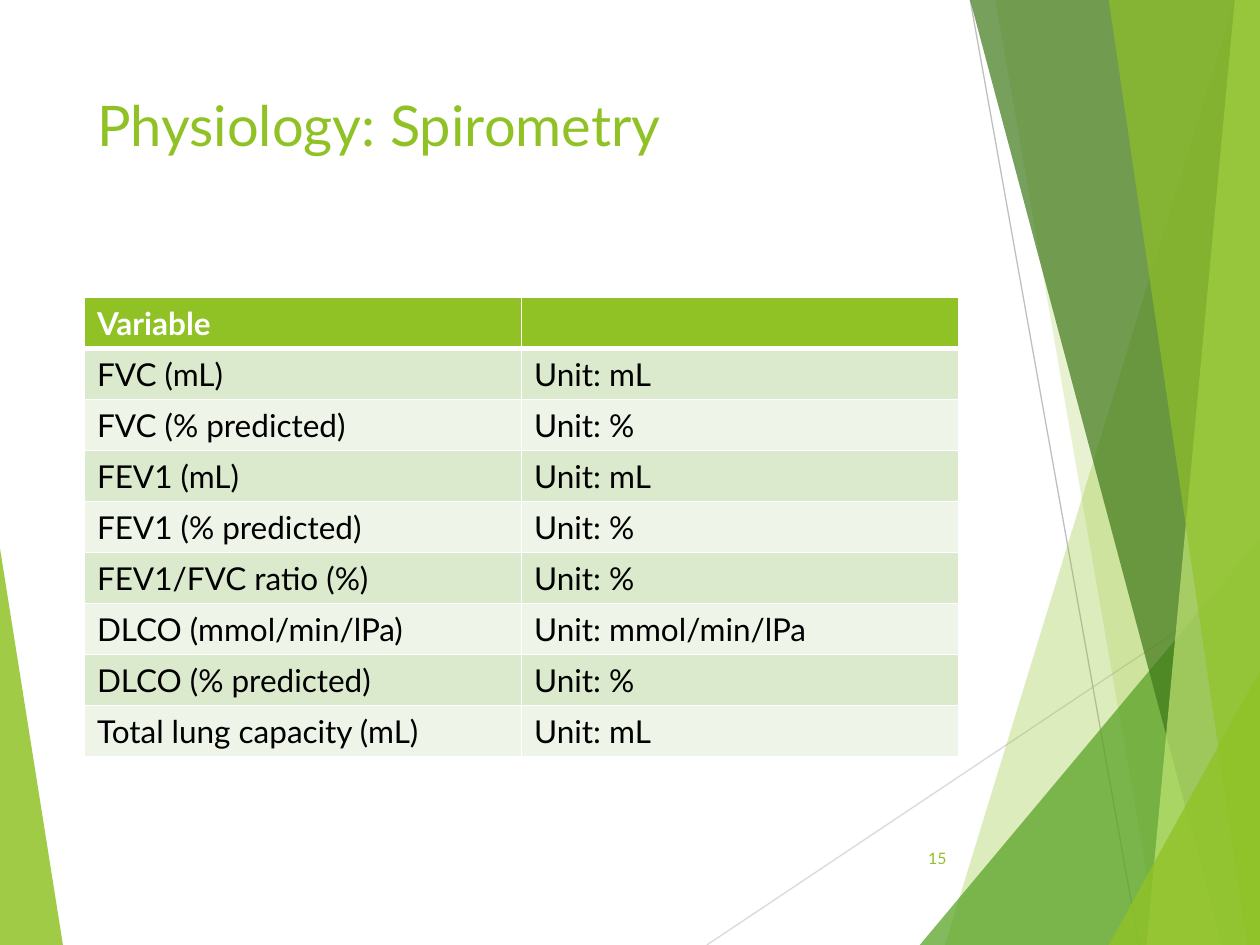
from pptx import Presentation
from pptx.dml.color import RGBColor
from pptx.enum.shapes import MSO_CONNECTOR
from pptx.enum.text import MSO_ANCHOR, PP_ALIGN
from pptx.oxml import parse_xml
from pptx.oxml.ns import nsdecls, qn
from pptx.util import Inches, Pt
from lxml import etree

STRAIGHT = MSO_CONNECTOR.STRAIGHT
TOP, MIDDLE = MSO_ANCHOR.TOP, MSO_ANCHOR.MIDDLE
LEFT, RIGHT = PP_ALIGN.LEFT, PP_ALIGN.RIGHT

FONT = "Lato"
TITLE_ONLY = 5
WIDTH, HEIGHT = Inches(10), Inches(7.5)
COLORS = {
    "lime": "90C226", "green": "54A021", "forest": "3F7819", "pale": "C0E474",
    "light_gray": "D9D9D9", "gray": "BFBFBF", "white": "FFFFFF", "black": "000000",
    "odd_row": "DBE9CD", "even_row": "EEF4E8",
}

# Boxes and points are percentages of the slide's width and height
FULL_BOX = (0, 0, 100, 100)
TITLE_BOX = (6.7, 8.93, 69.4, 19.2)
TABLE_BOX = (6.7, 31.5, 69.4, 48.6)
NUMBER_BOX = (70.5, 88.13, 5.6, 5.33)

# Facets: colour, opacity in percent, corners
LEFT_FACET = ("lime", 85, [(0, 58.5), (4.9, 100), (0, 100)])
RIGHT_FACETS = [
    ("lime", 30, [(97.5, 0), (75.4, 100), (100, 100), (100, 0)]),
    ("lime", 20, [(78.8, 0), (91.9, 100), (100, 100), (100, 0)]),
    ("green", 72, [(72.6, 100), (100, 57.2), (100, 100)]),
    ("forest", 70, [(76.7, 0), (97, 100), (100, 100), (100, 0)]),
    ("pale", 70, [(98.1, 0), (90.7, 100), (100, 100), (100, 0)]),
    ("lime", 65, [(88.3, 0), (98.6, 100), (100, 100), (99.8, 0)]),
    ("lime", 80, [(88.1, 100), (100, 71.3), (100, 100)]),
]
RAYS = [
    ("light_gray", (56.1, 100), (100, 60.9)),
    ("gray", (77, 0), (90.4, 100)),
]

ROWS = [
    ("Variable", ""),
    ("FVC (mL)", "Unit: mL"),
    ("FVC (% predicted)", "Unit: %"),
    ("FEV1 (mL)", "Unit: mL"),
    ("FEV1 (% predicted)", "Unit: %"),
    ("FEV1/FVC ratio (%)", "Unit: %"),
    ("DLCO (mmol/min/lPa)", "Unit: mmol/min/lPa"),
    ("DLCO (% predicted)", "Unit: %"),
    ("Total lung capacity (mL)", "Unit: mL"),
]


def rgb(name):
    return RGBColor.from_string(COLORS[name])


def place(box):
    """Turn a percentage box into left, top, width and height."""
    return [round(share * side / 100)
            for share, side in zip(box, (WIDTH, HEIGHT, WIDTH, HEIGHT))]


def write(frame, text, size=18, color="black", bold=False, align=LEFT):
    paragraph = frame.paragraphs[0]
    paragraph.alignment = align
    run = paragraph.add_run()
    run.text = text
    run.font.name = FONT
    run.font.size = Pt(size)
    run.font.bold = bold
    run.font.color.rgb = rgb(color)


def add_facet(slide, box, color, opacity, corners):
    left, top, width, height = place(box)
    builder = slide.shapes.build_freeform(*corners[0], scale=(width / 100, height / 100))
    builder.add_line_segments(corners[1:], close=True)
    facet = builder.convert_to_shape(left, top)
    facet.shadow.inherit = False
    facet.line.fill.background()
    facet.fill.solid()
    facet.fill.fore_color.rgb = rgb(color)
    fill_color = facet.fill._xPr.find(qn("a:solidFill"))[0]
    etree.SubElement(fill_color, qn("a:alpha"), val=str(opacity * 1000))


def add_ray(slide, box, color, start, end):
    left, top, width, height = place(box)
    points = [round(offset + share * side / 100)
              for point in (start, end)
              for offset, share, side in zip((left, top), point, (width, height))]
    ray = slide.shapes.add_connector(STRAIGHT, *points)
    ray.line.color.rgb = rgb(color)
    ray.line.width = Pt(0.75)
    etree.SubElement(ray._element.spPr, qn("a:effectLst"))


def add_background(slide, box):
    add_facet(slide, box, *LEFT_FACET)
    for ray in RAYS:
        add_ray(slide, box, *ray)
    for facet in RIGHT_FACETS:
        add_facet(slide, box, *facet)


def add_title(slide, box, text):
    title = slide.shapes.title
    title.left, title.top, title.width, title.height = place(box)
    title.text_frame.vertical_anchor = TOP
    title.text_frame.word_wrap = True
    write(title.text_frame, text, size=32, color="lime")


def set_borders(cell, **widths):
    properties = cell._tc.get_or_add_tcPr()
    for position, side in enumerate("LRTB"):
        width = Pt(widths.get(side, 1))
        properties.insert(position, parse_xml(
            f'<a:ln{side} {nsdecls("a")} w="{width}"><a:solidFill>'
            f'<a:srgbClr val="{COLORS["white"]}"/></a:solidFill></a:ln{side}>'))


def add_variable_table(slide, box, rows):
    table = slide.shapes.add_table(len(rows), len(rows[0]), *place(box)).table
    for row_index, row in enumerate(rows):
        header = row_index == 0
        fill = "lime" if header else "odd_row" if row_index % 2 else "even_row"
        for column_index, text in enumerate(row):
            cell = table.cell(row_index, column_index)
            cell.fill.solid()
            cell.fill.fore_color.rgb = rgb(fill)
            cell.vertical_anchor = TOP if header else MIDDLE
            set_borders(cell, B=3 if header else 1, T=3 if row_index == 1 else 1)
            write(cell.text_frame, text, bold=header, color="white" if header else "black")


def add_slide_number(slide, box, number):
    frame = slide.shapes.add_textbox(*place(box)).text_frame
    frame.word_wrap = True
    frame.vertical_anchor = MIDDLE
    write(frame, number, size=9, color="lime", align=RIGHT)


def main():
    presentation = Presentation()
    presentation.slide_width, presentation.slide_height = WIDTH, HEIGHT
    slide = presentation.slides.add_slide(presentation.slide_layouts[TITLE_ONLY])
    add_background(slide, FULL_BOX)
    add_title(slide, TITLE_BOX, "Physiology: Spirometry")
    add_variable_table(slide, TABLE_BOX, ROWS)
    add_slide_number(slide, NUMBER_BOX, "15")
    presentation.save("out.pptx")


if __name__ == "__main__":
    main()
